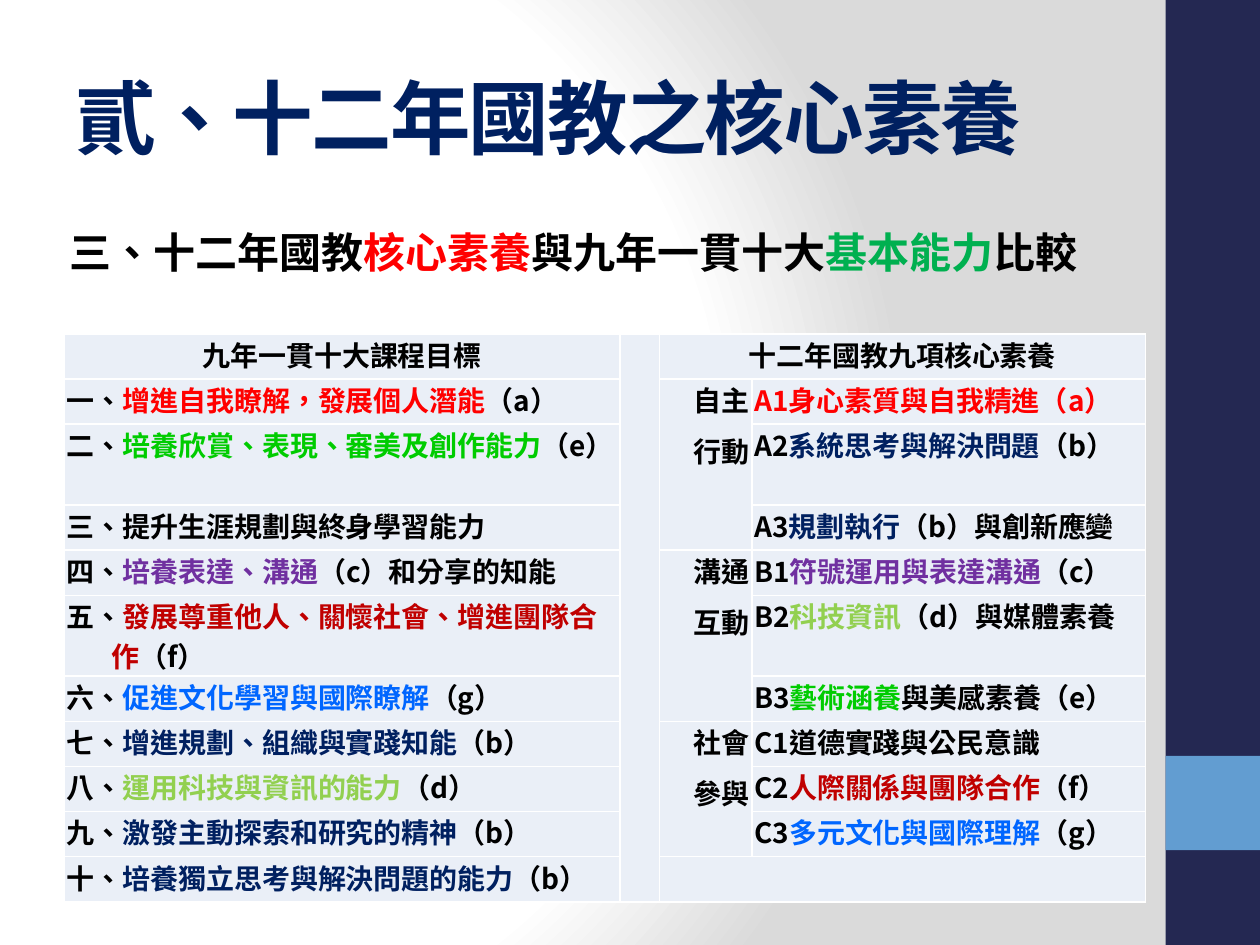
from lxml.etree import SubElement
from pptx import Presentation
from pptx.dml.color import RGBColor
from pptx.enum.shapes import MSO_SHAPE
from pptx.enum.text import MSO_ANCHOR, PP_ALIGN
from pptx.oxml import parse_xml
from pptx.oxml.ns import nsdecls, qn
from pptx.util import Cm, Pt

FONT = "Noto Sans CJK SC"
BLACK, NAVY, RED, GREEN = "000000", "002060", "FF0000", "00CC00"
PURPLE, CRIMSON, LIME, BLUE = "7030A0", "C00000", "92D050", "0066FF"
CELL_FILL = "EAEFF7"

# Content: each line is a list of (text, colour) runs
TITLE = [("貳、十二年國教之核心素養", NAVY)]
SUBTITLE = [("三、十二年國教", BLACK), ("核心素養", RED), ("與九年一貫十大", BLACK),
            ("基本能力", "00B050"), ("比較", BLACK)]
HEADERS = {0: "九年一貫十大課程目標", 2: "十二年國教九項核心素養"}
GOALS = [
    [("一、", BLACK), ("增進自我瞭解，發展個人潛能", RED), ("（a）", BLACK)],
    [("二、", BLACK), ("培養欣賞、表現、審美及創作能力", GREEN), ("（e）", BLACK)],
    [("三、提升生涯規劃與終身學習能力", BLACK)],
    [("四、", BLACK), ("培養表達、溝通", PURPLE), ("（c）和分享的知能", BLACK)],
    [("五、", BLACK), ("發展尊重他人、關懷社會、增進團隊合", CRIMSON)],
    [("六、", BLACK), ("促進文化學習與國際瞭解", BLUE), ("（g）", BLACK)],
    [("七、", BLACK), ("增進規劃、組織與實踐知能", NAVY), ("（b）", BLACK)],
    [("八、", BLACK), ("運用科技與資訊的能力", LIME), ("（d）", BLACK)],
    [("九、", BLACK), ("激發主動探索和研究的精神", NAVY), ("（b）", BLACK)],
    [("十、", BLACK), ("培養獨立思考與解決問題的能力", NAVY), ("（b）", BLACK)],
]
GOAL_5_REST = [("作", CRIMSON), ("（f）", BLACK)]
DOMAINS = [("自主", "行動"), ("溝通", "互動"), ("社會", "參與")]
COMPETENCIES = [
    [("A1身心素質與自我精進（a）", RED)],
    [("A2", BLACK), ("系統思考與解決問題", NAVY), ("（b）", BLACK)],
    [("A3", BLACK), ("規劃執行", NAVY), ("（b）與創新應變", BLACK)],
    [("B1", BLACK), ("符號運用與表達溝通", PURPLE), ("（c）", BLACK)],
    [("B2", BLACK), ("科技資訊", LIME), ("（d）與媒體素養", BLACK)],
    [("B3", BLACK), ("藝術涵養", GREEN), ("與美感素養（e）", BLACK)],
    [("C1道德實踐與公民意識", BLACK)],
    [("C2", BLACK), ("人際關係與團隊合作", CRIMSON), ("（f）", BLACK)],
    [("C3", BLACK), ("多元文化與國際理解", BLUE), ("（g）", BLACK)],
]
COL_WIDTHS = [11.2, 0.8, 1.86, 7.93]
ROW_HEIGHT, TWO_LINE_HEIGHT = 0.91, 1.63
TWO_LINE_ROWS = (2, 5)


def rgb(color):
    return RGBColor.from_string(color)


def write(p, runs, size, align=PP_ALIGN.LEFT, spacing=None):
    p.alignment = align
    for text, color in runs:
        r = p.add_run()
        r.text = text
        r.font.size, r.font.bold, r.font.name = Pt(size), True, FONT
        r.font.color.rgb = rgb(color)
        rPr = r.font._element
        rPr.set("lang", "zh-TW")
        SubElement(rPr, qn("a:ea")).set("typeface", FONT)
        if spacing:
            rPr.set("spc", str(spacing))


def add_band(s, top, height, color):
    sp = s.shapes.add_shape(MSO_SHAPE.RECTANGLE, Cm(23.5), Cm(top), Cm(1.9), Cm(height))
    sp.shadow.inherit = False
    sp.fill.solid()
    sp.fill.fore_color.rgb = rgb(color)
    sp.line.fill.background()


def add_heading(s, box, runs, size, anchor, spacing=None):
    tf = s.shapes.add_textbox(*map(Cm, box)).text_frame
    tf.word_wrap, tf.vertical_anchor = True, anchor
    write(tf.paragraphs[0], runs, size, spacing=spacing)


def set_background(s):
    stops = [(0, "FFFFFF"), (75, "FFFFFF"), (100, "DADADA")]
    gs = "".join(f'<a:gs pos="{pos * 1000}"><a:srgbClr val="{c}"/></a:gs>' for pos, c in stops)
    s.background.fill.solid()
    solid = s.background._cSld.bg.bgPr.find(qn("a:solidFill"))
    solid.getparent().replace(solid, parse_xml(
        f'<a:gradFill {nsdecls("a")} rotWithShape="1"><a:gsLst>{gs}</a:gsLst>'
        '<a:path path="circle"><a:fillToRect l="20000" t="50000" r="100000" b="50000"/>'
        '</a:path></a:gradFill>'))


def add_comparison(s):
    n_rows = len(GOALS) + 1
    heights = [TWO_LINE_HEIGHT if i in TWO_LINE_ROWS else ROW_HEIGHT for i in range(n_rows)]
    table = s.shapes.add_table(n_rows, len(COL_WIDTHS), Cm(1.3), Cm(6.73),
                               Cm(sum(COL_WIDTHS)), Cm(sum(heights))).table
    table.first_row = table.horz_banding = False
    for col, width in zip(table.columns, COL_WIDTHS):
        col.width = Cm(width)
    for row, height in zip(table.rows, heights):
        row.height = Cm(height)
    for cell in table.iter_cells():
        cell.fill.solid()
        cell.fill.fore_color.rgb = rgb(CELL_FILL)
        cell.margin_left = cell.margin_right = Cm(0.05)
        cell.margin_top = cell.margin_bottom = 0
        cell.text_frame.paragraphs[0].font.size = Pt(16)

    # Merged areas: gap column, right header, empty last row, one block per domain
    last = n_rows - 1
    table.cell(0, 1).merge(table.cell(last, 1))
    for row in (0, last):
        table.cell(row, 2).merge(table.cell(row, 3))
    for i, words in enumerate(DOMAINS):
        top = 1 + 3 * i
        cell = table.cell(top, 2)
        cell.merge(table.cell(top + 2, 2))
        tf = cell.text_frame
        for p, word in zip((tf.paragraphs[0], tf.add_paragraph()), words):
            p.space_before = Pt(6)
            write(p, [(word, BLACK)], 16, PP_ALIGN.RIGHT)

    # Headers and lists
    for col, text in HEADERS.items():
        write(table.cell(0, col).text_frame.paragraphs[0], [(text, BLACK)], 16, PP_ALIGN.CENTER)
    for col, lines in ((0, GOALS), (3, COMPETENCIES)):
        for row, runs in enumerate(lines, 1):
            write(table.cell(row, col).text_frame.paragraphs[0], runs, 16)
    p = table.cell(5, 0).text_frame.add_paragraph()
    write(p, GOAL_5_REST, 16)
    p._p.get_or_add_pPr().set("marL", str(Cm(0.9)))


def main():
    prs = Presentation()
    prs.slide_width, prs.slide_height = Cm(25.4), Cm(19.05)
    s = prs.slides.add_slide(prs.slide_layouts[6])
    set_background(s)
    add_band(s, 0, 19.05, "242852")
    add_band(s, 15.24, 1.9, "629DD1")
    add_heading(s, (1.27, 0.76, 21.16, 3.18), TITLE, 46, MSO_ANCHOR.MIDDLE, spacing=-100)
    add_heading(s, (1.16, 4.45, 21.27, 1.5), SUBTITLE, 24, MSO_ANCHOR.TOP)
    add_comparison(s)
    prs.save("out.pptx")


if __name__ == "__main__":
    main()
